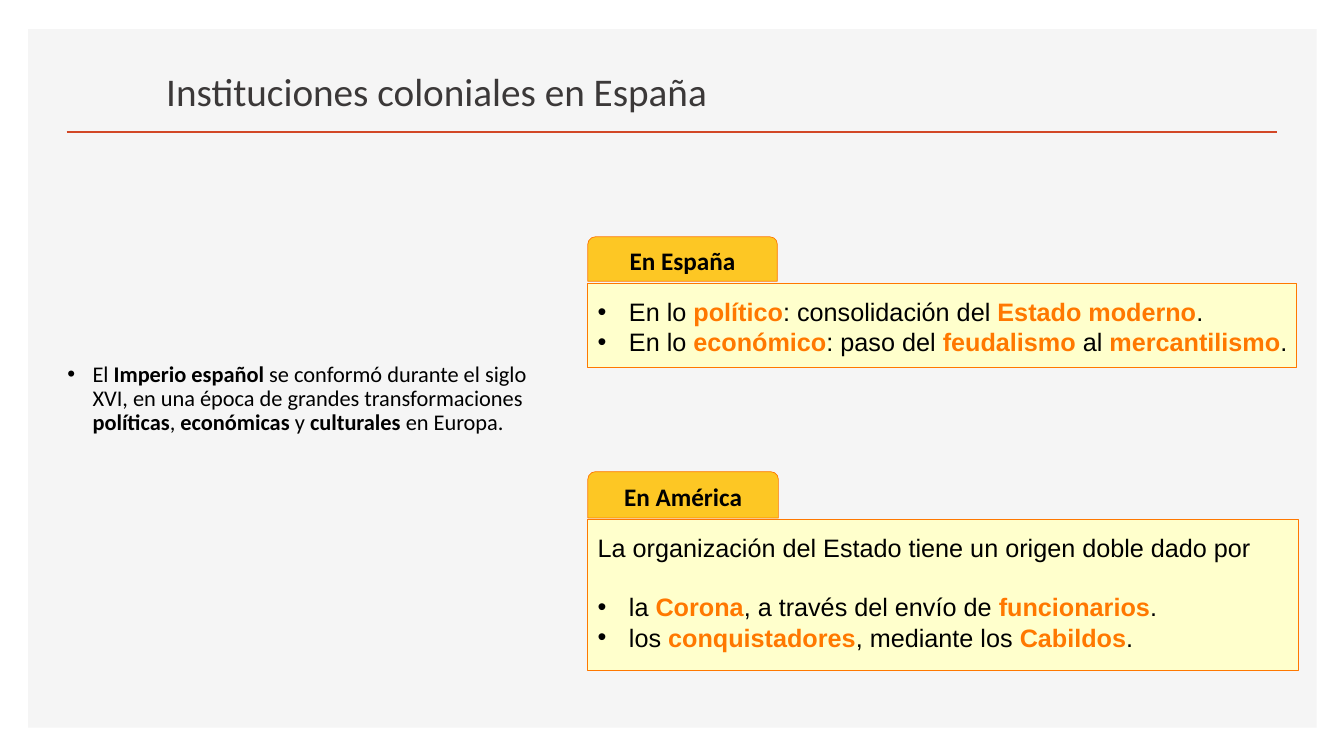
from lxml import etree
from pptx import Presentation
from pptx import util as u
from pptx.dml import color
from pptx.enum import shapes, text
from pptx.oxml import ns

COLORS = {
    "panel": "F5F5F5", "rule": "D24726", "title": "3B3838", "black": "000000",
    "accent": "FF7800", "cream": "FFFFCC", "gold": "FFC000",
}
BULLET = "• "


def rgb(name):
    return color.RGBColor.from_string(COLORS[name])


def write_text(frame, paragraphs, size=18, font="Calibri", ink="black", strong="black",
               align=text.PP_ALIGN.LEFT, anchor=text.MSO_ANCHOR.TOP,
               indent=0.31, spacing=None, before=0, gap_after_first=0):
    """Fill a frame; **words** are bold, and a leading bullet sign makes a list item."""
    frame.word_wrap = True
    frame.vertical_anchor = anchor
    for index, line in enumerate(paragraphs):
        paragraph = frame.paragraphs[0] if index == 0 else frame.add_paragraph()
        paragraph.alignment = align
        paragraph.line_spacing = spacing
        paragraph.space_before = u.Pt(before)
        paragraph.space_after = u.Pt(gap_after_first if index == 0 else 0)
        if line.startswith(BULLET):
            props = paragraph._p.get_or_add_pPr()
            props.set("marL", str(u.Inches(indent)))
            props.set("indent", str(-u.Inches(indent)))
            etree.SubElement(props, ns.qn("a:buFont")).set("typeface", "Arial")
            etree.SubElement(props, ns.qn("a:buChar")).set("char", BULLET.strip())
        for part, words in enumerate(line.removeprefix(BULLET).split("**")):
            if words:
                run = paragraph.add_run()
                run.text = words
                run.font.name = font
                run.font.size = u.Pt(size)
                run.font.bold = part % 2 == 1
                run.font.color.rgb = rgb(strong if part % 2 else ink)


class ColonialSlide:
    def __init__(self, deck):
        self.slide = deck.slides.add_slide(deck.slide_layouts[5])
        self.shapes = self.slide.shapes

    def block(self, parent, kind, at, fill, line=None, alpha=None):
        shape = parent.add_shape(kind, *map(u.Inches, at))
        shape.shadow.inherit = False
        shape.fill.solid()
        shape.fill.fore_color.rgb = rgb(fill)
        if alpha:
            solid = shape.element.spPr.find(ns.qn("a:solidFill"))
            etree.SubElement(solid[0], ns.qn("a:alpha")).set("val", str(alpha * 1000))
        if line:
            shape.line.color.rgb = rgb(line)
            shape.line.width = u.Pt(0.5)
        else:
            shape.line.fill.background()
        return shape

    def backdrop(self, at):
        panel = self.block(self.shapes, shapes.MSO_SHAPE.RECTANGLE, at, "panel")
        self.shapes.title.element.addprevious(panel.element)

    def rule(self, left, right, y):
        line = self.shapes.add_connector(
            shapes.MSO_CONNECTOR.STRAIGHT, *map(u.Inches, (left, y, right, y)))
        line.line.color.rgb = rgb("rule")
        line.line.width = u.Pt(2)
        etree.SubElement(line.element.spPr, ns.qn("a:effectLst"))

    def title(self, at, words):
        title = self.shapes.title
        title.left, title.top, title.width, title.height = map(u.Inches, at)
        title.text_frame.auto_size = text.MSO_AUTO_SIZE.NONE
        write_text(title.text_frame, [words], size=28, ink="title", spacing=0.9,
                   align=text.PP_ALIGN.CENTER, anchor=text.MSO_ANCHOR.BOTTOM)

    def text_box(self, parent, at, paragraphs, **style):
        box = parent.add_textbox(*map(u.Inches, at))
        write_text(box.text_frame, paragraphs, **style)

    def card(self, heading, tab_at, box_at, text_size, paragraphs, gap_after_first=0):
        group = self.shapes.add_group_shape().shapes
        self.block(group, shapes.MSO_SHAPE.RECTANGLE, box_at, "cream", "accent")
        left, top = box_at[:2]
        self.text_box(group, (left, top + 0.08, *text_size), paragraphs, font="Arial",
                      strong="accent", gap_after_first=gap_after_first)
        tab = self.block(group, shapes.MSO_SHAPE.ROUND_2_SAME_RECTANGLE, tab_at,
                         "gold", "accent", alpha=85)
        write_text(tab.text_frame, [f"**{heading}**"], align=text.PP_ALIGN.CENTER,
                   anchor=text.MSO_ANCHOR.MIDDLE)


def main():
    deck = Presentation()
    deck.slide_width, deck.slide_height = u.Inches(13.33), u.Inches(7.5)
    page = ColonialSlide(deck)

    # Frame and heading
    page.backdrop((0.28, 0.29, 12.78, 6.93))
    page.rule(0.66, 12.67, 1.31)
    page.title((0.57, 0.49, 7.52, 0.7), "Instituciones coloniales en España")

    # Context on the left
    page.text_box(page.shapes, (0.57, 3.55, 4.83, 2.71), [
        "• El **Imperio español** se conformó durante el siglo XVI, en una época de grandes "
        "transformaciones **políticas**, **económicas** y **culturales** en Europa.",
    ], size=16, indent=0.25, spacing=0.9, before=10)

    # Cards on the right
    page.card("En España", (5.83, 2.35, 1.88, 0.44), (5.83, 2.81, 7.03, 0.84), (7.11, 0.71), [
        "• En lo **político**: consolidación del **Estado moderno**.",
        "• En lo **económico**: paso del **feudalismo** al **mercantilismo**.",
    ])
    page.card("En América", (5.83, 4.68, 1.89, 0.46), (5.83, 5.15, 7.05, 1.5), (6.83, 1.31), [
        "La organización del Estado tiene un origen doble dado por",
        "• la **Corona**, a través del envío de **funcionarios**.",
        "• los **conquistadores**, mediante los **Cabildos**.",
    ], gap_after_first=21)

    deck.save("out.pptx")


if __name__ == "__main__":
    main()
